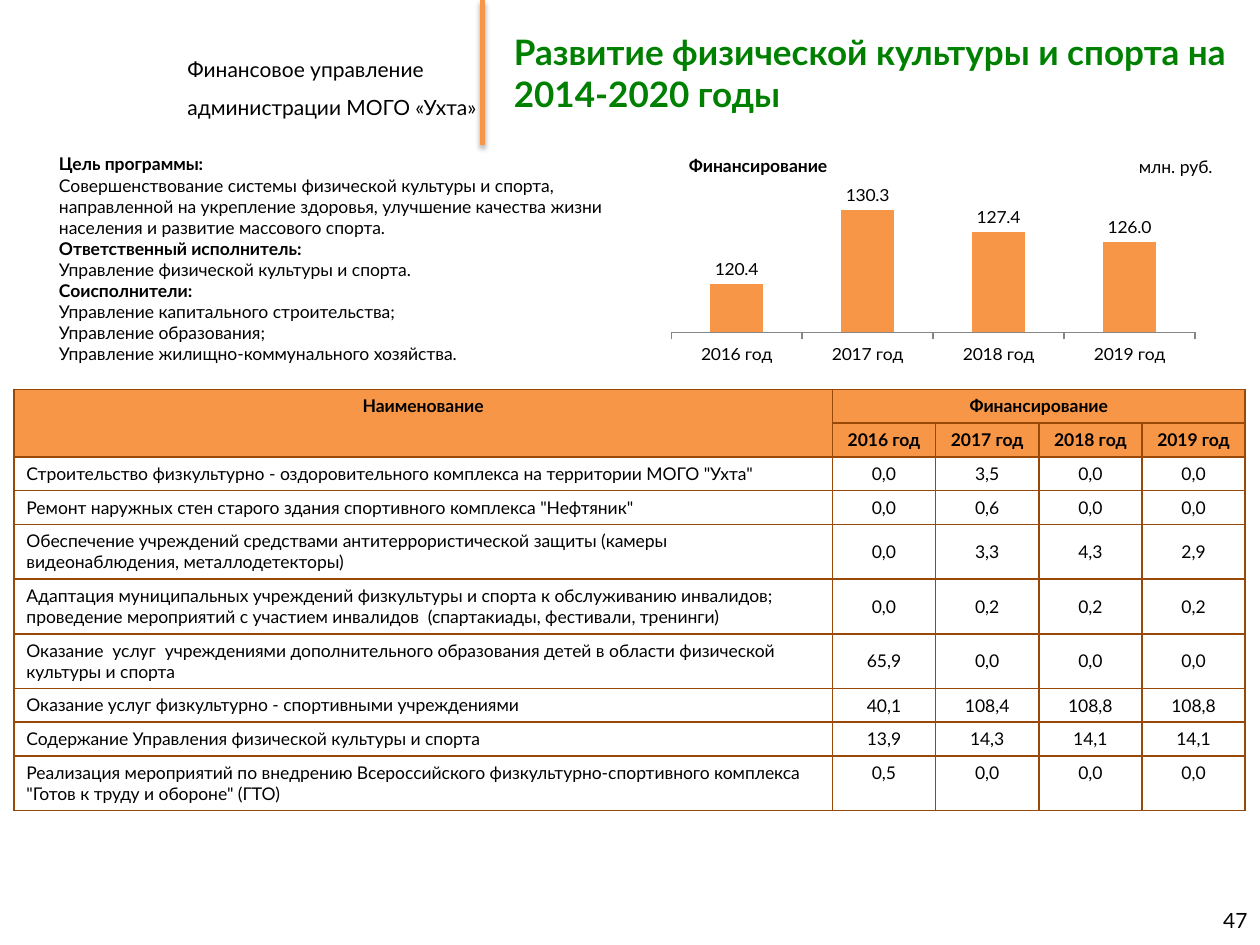
from dataclasses import dataclass

from lxml import etree
from pptx import Presentation
from pptx import util as u
from pptx.chart.data import CategoryChartData
from pptx.dml.color import RGBColor
from pptx.enum import chart as ch, shapes, text
from pptx.oxml import parse_xml
from pptx.oxml.ns import nsdecls, qn


@dataclass(frozen=True)
class Theme:
    face: str = "Lato"
    ink: str = "000000"
    heading: str = "008000"
    accent: str = "F79646"
    border: str = "984807"
    axis: str = "868686"
    paper: str = "FFFFFF"
    title: int = 20
    header: int = 12
    body: int = 10


YEARS = [f"{year} год" for year in range(2016, 2020)]
FUNDING = [120.4, 130.3, 127.4, 126.0]
PROGRAMME = [
    ("Цель программы:", [
        "Совершенствование системы физической культуры и спорта,",
        "направленной на укрепление здоровья, улучшение качества жизни",
        "населения и развитие массового спорта."]),
    ("Ответственный исполнитель:", ["Управление физической культуры и спорта."]),
    ("Соисполнители:", [
        "Управление капитального строительства;",
        "Управление образования;",
        "Управление жилищно-коммунального хозяйства."]),
]
MEASURES = [
    ('Строительство физкультурно - оздоровительного комплекса на территории МОГО "Ухта"',
     "0,0 3,5 0,0 0,0"),
    ('Ремонт наружных стен старого здания спортивного комплекса "Нефтяник"',
     "0,0 0,6 0,0 0,0"),
    ("Обеспечение учреждений средствами антитеррористической защиты (камеры "
     "видеонаблюдения, металлодетекторы)", "0,0 3,3 4,3 2,9"),
    ("Адаптация муниципальных учреждений физкультуры и спорта к обслуживанию инвалидов; "
     "проведение мероприятий с участием инвалидов  (спартакиады, фестивали, тренинги)",
     "0,0 0,2 0,2 0,2"),
    ("Оказание  услуг  учреждениями дополнительного образования детей в области физической "
     "культуры и спорта", "65,9 0,0 0,0 0,0"),
    ("Оказание услуг физкультурно - спортивными учреждениями", "40,1 108,4 108,8 108,8"),
    ("Содержание Управления физической культуры и спорта", "13,9 14,3 14,1 14,1"),
    ("Реализация мероприятий по внедрению Всероссийского физкультурно-спортивного комплекса "
     '"Готов к труду и обороне" (ГТО)', "0,5 0,0 0,0 0,0"),
]


def assign(target, values):
    for name, value in values.items():
        setattr(target, name, value)


class SlideBuilder:
    """Holds the theme and the current slide and draws each kind of element."""

    def __init__(self, theme, slide):
        self.theme = theme
        self.slide = slide

    def style(self, font, size=None, bold=False, color=None):
        assign(font, {"name": self.theme.face, "size": u.Pt(size or self.theme.body),
                      "bold": bold})
        font.color.rgb = RGBColor.from_string(color or self.theme.ink)

    def paint(self, fill, color):
        fill.solid()
        fill.fore_color.rgb = RGBColor.from_string(color)

    def text_box(self, box, lines, frame_format=None, paragraph_format=None, **font):
        frame = self.slide.shapes.add_textbox(*map(u.Cm, box)).text_frame
        assign(frame, frame_format or {"word_wrap": False,
                                       "auto_size": text.MSO_AUTO_SIZE.SHAPE_TO_FIT_TEXT})
        for index, (line, bold) in enumerate(lines):
            paragraph = frame.add_paragraph() if index else frame.paragraphs[0]
            paragraph.text = line
            assign(paragraph, paragraph_format or {})
            self.style(paragraph.font, bold=bold, **font)

    def divider(self, x, height):
        rule = self.slide.shapes.add_connector(
            shapes.MSO_CONNECTOR.STRAIGHT, u.Cm(x), 0, u.Cm(x), u.Cm(height))
        rule.line.color.rgb = RGBColor.from_string(self.theme.accent)
        rule.line.width = u.Pt(3)
        rule._element.spPr.append(parse_xml(
            f'<a:effectLst {nsdecls("a")}><a:outerShdw blurRad="{u.Pt(3.1)}" '
            f'dist="{u.Pt(1.8)}" dir="5400000" rotWithShape="0"><a:srgbClr val="{self.theme.ink}">'
            '<a:alpha val="35000"/></a:srgbClr></a:outerShdw></a:effectLst>'))

    def columns(self, box, categories, values):
        series_data = CategoryChartData()
        series_data.categories = categories
        series_data.add_series("Финансирование", values)
        chart = self.slide.shapes.add_chart(
            ch.XL_CHART_TYPE.COLUMN_CLUSTERED, *map(u.Cm, box), series_data).chart
        assign(chart, {"has_legend": False, "has_title": False})
        self.style(chart.font)
        assign(chart.value_axis, {"visible": False, "has_major_gridlines": False,
                                  "minimum_scale": 114, "maximum_scale": 132})
        chart.category_axis.major_tick_mark = ch.XL_TICK_MARK.OUTSIDE
        chart.category_axis.format.line.color.rgb = RGBColor.from_string(self.theme.axis)
        plot = chart.plots[0]
        assign(plot, {"gap_width": 150, "vary_by_categories": False, "has_data_labels": True})
        assign(plot.data_labels, {"show_value": True, "number_format": "#,##0.0",
                                  "number_format_is_linked": False,
                                  "position": ch.XL_LABEL_POSITION.OUTSIDE_END})
        self.style(plot.data_labels.font)
        self.paint(plot.series[0].format.fill, self.theme.accent)

    def cell(self, cell, words, fill, centered=True, bold=False,
             anchor=text.MSO_ANCHOR.MIDDLE):
        cell.text = words
        cell.vertical_anchor = anchor
        paragraph = cell.text_frame.paragraphs[0]
        paragraph.alignment = text.PP_ALIGN.CENTER if centered else text.PP_ALIGN.LEFT
        self.style(paragraph.font, bold=bold)
        self.paint(cell.fill, fill)
        properties = cell._tc.get_or_add_tcPr()
        for position, side in enumerate(("lnL", "lnR", "lnT", "lnB")):
            edge = etree.Element(qn(f"a:{side}"), w=str(u.Pt(1)))
            solid = etree.SubElement(edge, qn("a:solidFill"))
            etree.SubElement(solid, qn("a:srgbClr"), val=self.theme.border)
            properties.insert(position, edge)

    def table(self, corner, widths, line_heights, years, measures):
        heights = [line_heights[0]] * 2 + [line_heights[len(name) > 90] for name, _ in measures]
        grid = self.slide.shapes.add_table(
            len(heights), len(widths), *map(u.Cm, (*corner, sum(widths), sum(heights)))).table
        for column, width in zip(grid.columns, widths):
            column.width = u.Cm(width)
        for row, height in zip(grid.rows, heights):
            row.height = u.Cm(height)
        top, middle = text.MSO_ANCHOR.TOP, text.MSO_ANCHOR.MIDDLE
        blanks = [""] * (len(years) - 1)
        headings = [["Наименование", "Финансирование", *blanks], ["", *years]]
        for r, heading in enumerate(headings):
            for c, words in enumerate(heading):
                self.cell(grid.cell(r, c), words, self.theme.accent, bold=True, anchor=top)
        for r, (name, amounts) in enumerate(measures, len(headings)):
            self.cell(grid.cell(r, 0), name, self.theme.paper, centered=False, anchor=top)
            anchor = top if r == len(heights) - 1 else middle
            for c, amount in enumerate(amounts.split(), 1):
                self.cell(grid.cell(r, c), amount, self.theme.paper, anchor=anchor)
        grid.cell(0, 0).merge(grid.cell(1, 0))
        grid.cell(0, 1).merge(grid.cell(0, len(years)))


def main():
    theme = Theme()
    deck = Presentation()
    assign(deck, {"slide_width": u.Cm(25.4), "slide_height": u.Cm(19.05)})
    page = SlideBuilder(theme, deck.slides.add_slide(deck.slide_layouts[6]))
    wrapped = {"word_wrap": True, "vertical_anchor": text.MSO_ANCHOR.MIDDLE}

    page.text_box((3.53, 0.76, 6.35, 1.68),
                  [("Финансовое управление", False), ("администрации МОГО «Ухта»", False)],
                  paragraph_format={"line_spacing": 1.5}, size=theme.header)
    page.divider(9.73, 2.92)
    page.text_box((10.11, 0, 15.29, 2.92),
                  [("Развитие физической культуры и спорта на 2014-2020 годы", True)],
                  wrapped, size=theme.title, color=theme.heading)
    page.text_box((19.48, 18.03, 5.92, 1.02), [("47", False)], wrapped,
                  {"alignment": text.PP_ALIGN.RIGHT}, size=theme.header)
    page.columns((13.31, 3.73, 11, 3.68), YEARS, FUNDING)
    page.table((0.28, 7.85), [16.5] + [2.08] * len(YEARS), (0.68, 1.1), YEARS, MEASURES)
    page.text_box((0.94, 2.97, 11.68, 4.95),
                  [line for label, details in PROGRAMME
                   for line in [(label, True), *((detail, False) for detail in details)]])
    page.text_box((22.71, 3.02, 2.03, 0.69), [("млн. руб.", False)])
    page.text_box((13.64, 3, 3.71, 0.69), [("Финансирование", True)])
    deck.save("out.pptx")


if __name__ == "__main__":
    main()
